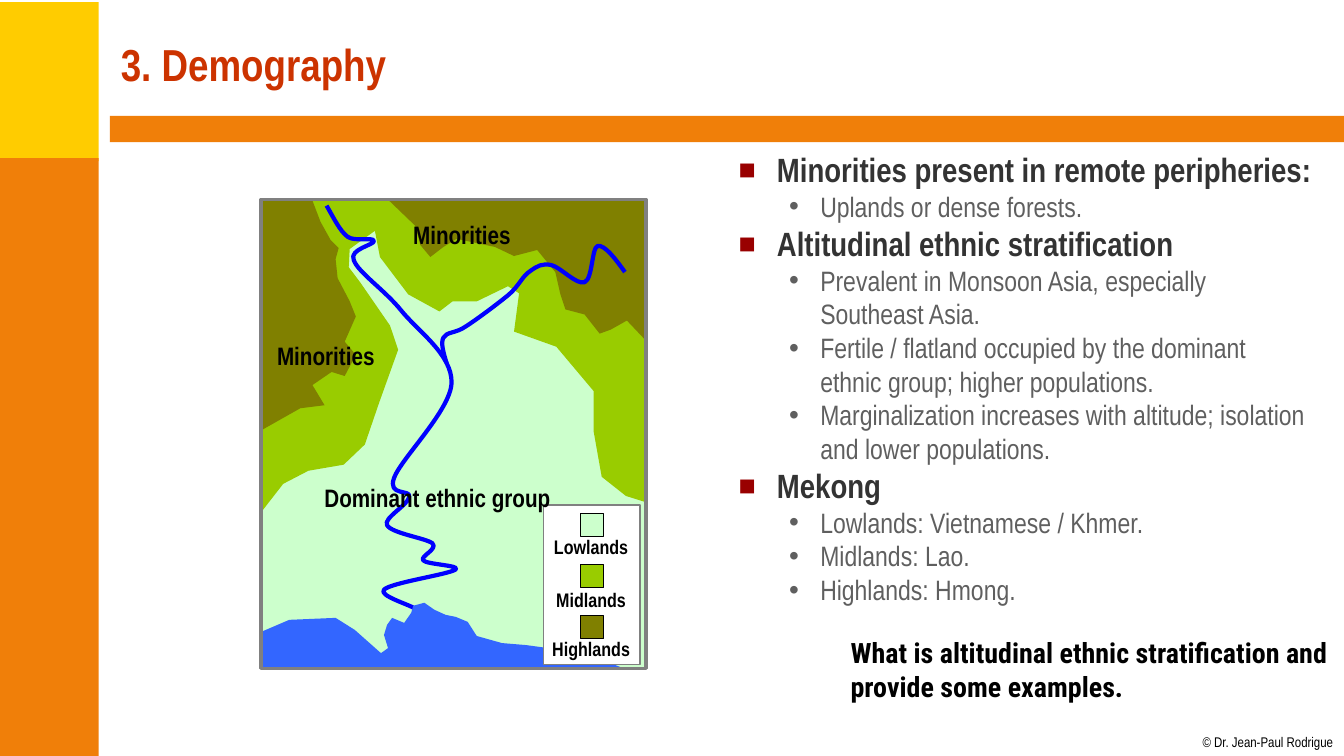
from lxml.etree import SubElement
from pptx import Presentation
from pptx.dml.color import RGBColor
from pptx.enum.shapes import MSO_SHAPE
from pptx.enum.text import MSO_ANCHOR, PP_ALIGN
from pptx.oxml.ns import qn
from pptx.util import Pt

YELLOW = RGBColor(0xFF, 0xCC, 0x00)
ORANGE = RGBColor(0xF0, 0x7F, 0x09)
RED = RGBColor(0xCC, 0x33, 0x00)
DARK_GRAY = RGBColor(0x33, 0x33, 0x33)
MID_GRAY = RGBColor(0x5F, 0x5F, 0x5F)
FRAME_GRAY = RGBColor(0x80, 0x80, 0x80)
BLACK = RGBColor(0x00, 0x00, 0x00)
WHITE = RGBColor(0xFF, 0xFF, 0xFF)
LOWLAND = RGBColor(0xCC, 0xFF, 0xCC)
MIDLAND = RGBColor(0x99, 0xCC, 0x00)
HIGHLAND = RGBColor(0x80, 0x80, 0x00)
SEA = RGBColor(0x33, 0x66, 0xFF)
RIVER = RGBColor(0x00, 0x00, 0xFF)
BULLET_RED = "990000"
NARROW = "Arial Narrow"

# Map outlines are listed in units of 0.72 pt
MAP_UNIT = Pt(0.72)
MAP_BOX = (186.48, 142.56, 275.04, 334.8)
MIDLANDS = [
    (260, 199), (640, 199), (640, 498), (621, 492), (597, 473), (589, 428),
    (589, 388), (552, 344), (510, 329), (515, 291), (504, 284), (473, 299),
    (449, 299), (436, 309), (405, 292), (377, 255), (372, 229), (347, 247),
    (346, 265), (358, 281), (387, 323), (395, 347), (376, 400), (362, 441),
    (341, 461), (306, 467), (281, 480), (260, 507)]
EAST_HIGHLANDS = [
    (386, 199), (412, 224), (417, 243), (427, 255), (440, 245), (453, 237),
    (491, 245), (510, 254), (533, 248), (551, 270), (556, 292), (561, 307),
    (580, 312), (595, 331), (606, 327), (622, 318), (640, 337), (640, 198)]
WEST_HIGHLANDS = [
    (259, 427), (298, 405), (322, 402), (310, 382), (329, 369), (342, 373),
    (353, 352), (342, 339), (353, 314), (347, 299), (335, 276), (333, 257),
    (336, 246), (328, 238), (318, 220), (310, 199), (260, 199)]
SEA_OUTLINE = [
    (259, 627), (287, 615), (333, 613), (352, 625), (378, 648), (385, 643),
    (381, 630), (384, 620), (389, 613), (401, 618), (408, 608), (410, 601),
    (421, 598), (431, 605), (442, 610), (452, 612), (464, 617), (473, 631),
    (498, 638), (522, 640), (544, 643), (562, 648), (591, 652), (616, 662),
    (260, 662)]
# Start point, then two control points and an end point per curve
MAIN_RIVER = [
    (412, 604), (407, 600), (375, 591), (381, 585), (388, 578), (445, 570),
    (452, 565), (458, 561), (423, 560), (420, 556), (416, 552), (435, 545),
    (429, 539), (423, 534), (388, 529), (384, 521), (380, 514), (405, 501),
    (406, 493), (408, 485), (384, 493), (391, 474), (398, 455), (447, 407),
    (448, 380), (449, 352), (414, 328), (398, 308), (382, 288), (355, 270),
    (351, 258), (346, 247), (372, 243), (371, 239), (370, 235), (352, 240),
    (345, 235), (337, 229), (331, 216), (324, 204)]
TRIBUTARY = [
    (620, 270), (610, 256), (600, 243), (593, 244), (587, 246), (588, 277),
    (580, 280), (572, 283), (556, 265), (547, 263), (538, 261), (533, 264),
    (526, 269), (518, 274), (515, 284), (504, 293), (493, 302), (473, 317),
    (462, 324), (452, 331), (443, 329), (440, 335), (437, 340), (440, 350),
    (443, 360)]

LEGEND = [("Lowlands", LOWLAND, 378.72), ("Midlands", MIDLAND, 416.16),
          ("Highlands", HIGHLAND, 451.44)]
MAP_LABELS = [("Dominant ethnic group", (224.64, 341.28, 177.84, 28.8)),
              ("Minorities", (190.8, 239.76, 84.96, 28.8)),
              ("Minorities", (288, 153.36, 84.96, 28.8))]
OUTLINE = [
    ("Minorities present in remote peripheries:",
     ["Uplands or dense forests."]),
    ("Altitudinal ethnic stratification",
     ["Prevalent in Monsoon Asia, especially Southeast Asia.",
      "Fertile / flatland occupied by the dominant ethnic group; "
      "higher populations.",
      "Marginalization increases with altitude; isolation and lower "
      "populations."]),
    ("Mekong",
     ["Lowlands: Vietnamese / Khmer.", "Midlands: Lao.",
      "Highlands: Hmong."]),
]


def paint(sp, fill=None, line=None, width=1):
    sp.shadow.inherit = False
    if fill is None:
        sp.fill.background()
    else:
        sp.fill.solid()
        sp.fill.fore_color.rgb = fill
    if line is None:
        sp.line.fill.background()
    else:
        sp.line.color.rgb = line
        sp.line.width = Pt(width)


def add_rect(slide, box, fill=None, line=None, width=1):
    sp = slide.shapes.add_shape(MSO_SHAPE.RECTANGLE, *map(Pt, box))
    paint(sp, fill, line, width)


def add_region(slide, points, fill):
    builder = slide.shapes.build_freeform(*points[0], scale=MAP_UNIT)
    builder.add_line_segments(points[1:], close=True)
    paint(builder.convert_to_shape(), fill)


def add_river(slide, points):
    """Draw an open line whose points are joined by cubic curves."""
    builder = slide.shapes.build_freeform(*points[0], scale=MAP_UNIT)
    builder.add_line_segments(points[1:], close=False)
    sp = builder.convert_to_shape()
    path = sp.element.find(".//" + qn("a:path"))
    segments = path.findall(qn("a:lnTo"))
    for i in range(0, len(segments), 3):
        curve = SubElement(path, qn("a:cubicBezTo"))
        for segment in segments[i:i + 3]:
            curve.append(segment[0])
            path.remove(segment)
    paint(sp, line=RIVER, width=3)


def format_run(p, size, color, bold, font=NARROW):
    r = p.runs[0]
    r.font.size = Pt(size)
    r.font.name = font
    r.font.bold = bold
    r.font.color.rgb = color


def add_text(slide, box, text, size, color=BLACK, bold=True, font=NARROW,
             wrap=False):
    tf = slide.shapes.add_textbox(*map(Pt, box)).text_frame
    tf.word_wrap = wrap
    tf.text = text
    format_run(tf.paragraphs[0], size, color, bold, font)
    return tf


def add_bullet(p, char, margin, hanging, color=None, percent=100):
    pPr = p._p.get_or_add_pPr()
    pPr.set("marL", str(Pt(margin)))
    pPr.set("indent", str(-Pt(hanging)))
    if color:
        SubElement(SubElement(pPr, qn("a:buClr")), qn("a:srgbClr"), val=color)
    SubElement(pPr, qn("a:buSzPct"), val=str(percent * 1000))
    SubElement(pPr, qn("a:buFont"), typeface="Arial")
    SubElement(pPr, qn("a:buChar"), char=char)


def add_outline(slide):
    box = (520.56, 102.96, 424.8, 416.88)
    tf = slide.shapes.add_textbox(*map(Pt, box)).text_frame
    tf.word_wrap = True
    p = tf.paragraphs[0]
    for i, (heading, points) in enumerate(OUTLINE):
        if i:
            p = tf.add_paragraph()
        p.text = heading
        add_bullet(p, "■", 27.36, 27.36, BULLET_RED, 85)
        format_run(p, 24, DARK_GRAY, True)
        for point in points:
            p = tf.add_paragraph()
            p.text = point
            p.level = 1
            add_bullet(p, "•", 58.32, 22.32)
            format_run(p, 20, MID_GRAY, False)


def add_legend(slide):
    add_rect(slide, (388.08, 360.72, 69.12, 113.76), WHITE, FRAME_GRAY)
    for i, (name, color, top) in enumerate(LEGEND):
        swatch = (414.72, 366.48 + i * 36.72, 16.56, 16.56)
        add_rect(slide, swatch, color, BLACK, 0.75)
        tf = add_text(slide, (387.36, top, 69.84, 23.76), name, 14)
        tf.paragraphs[0].alignment = PP_ALIGN.CENTER


def add_map(slide):
    add_rect(slide, MAP_BOX, LOWLAND)
    add_region(slide, MIDLANDS, MIDLAND)
    add_region(slide, EAST_HIGHLANDS, HIGHLAND)
    add_river(slide, MAIN_RIVER)
    add_river(slide, TRIBUTARY)
    add_region(slide, SEA_OUTLINE, SEA)
    add_region(slide, WEST_HIGHLANDS, HIGHLAND)
    add_rect(slide, MAP_BOX, line=FRAME_GRAY, width=2.5)
    add_legend(slide)
    for text, box in MAP_LABELS:
        add_text(slide, box, text, 18)


def add_banner(slide):
    add_rect(slide, (-1.44, 1.44, 72, 113.76), YELLOW)
    add_rect(slide, (-1.44, 113.04, 72, 426.96), ORANGE)
    add_rect(slide, (78.48, 82.8, 881.52, 18.72), ORANGE)
    tf = add_text(slide, (858.96, 524.16, 94.32, 12.24),
                  "© Dr. Jean-Paul Rodrigue", 10, bold=False)
    tf.margin_left = tf.margin_right = tf.margin_top = tf.margin_bottom = 0


def main():
    prs = Presentation()
    prs.slide_width, prs.slide_height = Pt(960), Pt(540)
    slide = prs.slides.add_slide(prs.slide_layouts[6])
    add_banner(slide)
    title = add_text(slide, (79.2, 7.92, 864, 74.88), "3. Demography", 32,
                     RED, wrap=True)
    title.vertical_anchor = MSO_ANCHOR.MIDDLE
    add_outline(slide)
    add_map(slide)
    add_text(slide, (600.48, 450.72, 359.28, 55.44),
             "What is altitudinal ethnic stratification and provide some "
             "examples.", 20, font="Roboto Condensed", wrap=True)
    prs.save("out.pptx")


if __name__ == "__main__":
    main()
